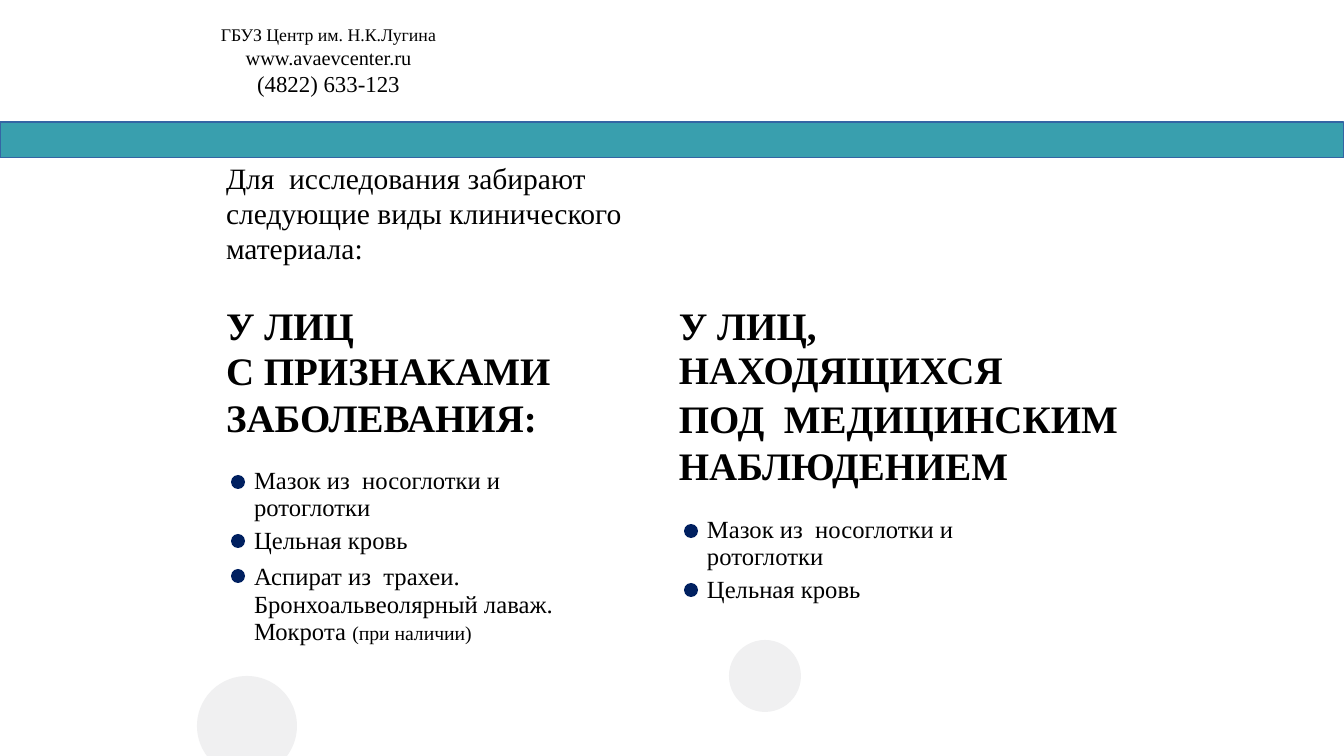
from pptx import Presentation
from pptx.dml.color import RGBColor
from pptx.enum.shapes import MSO_SHAPE as Shape
from pptx.enum.text import MSO_ANCHOR as Anchor, MSO_AUTO_SIZE as AutoSize, PP_ALIGN as Align
from pptx.util import Pt

PX = 914400 / 100.8
FONT = "Times New Roman"
BLACK, TEAL, BLUE, PALE, NAVY = "000000", "399FAE", "3465A4", "F0F0F1", "002060"

# Content: each line is (text, size, line spacing, space before)
CONTACTS = [("ГБУЗ Центр им. Н.К.Лугина", 12.7, 1.0, 0),
            ("www.avaevcenter.ru", 14.5, 1.0, 0),
            ("(4822) 633-123", 16.3, 1.0, 0)]
INTRO = [("Для  исследования забирают", 21.1, Pt(22.9), 0),
         ("следующие виды клинического материала:", 21.1, Pt(25.2), 0)]
SWAB = "Мазок из  носоглотки и\vротоглотки"
BLOOD = "Цельная кровь"
COLUMNS = [
    {"left": 226, "width": 386,
     "heading": [("У ЛИЦ", 27.8, Pt(30.5), 0),
                 ("С ПРИЗНАКАМИ", 27.8, Pt(31.9), 0.2),
                 ("ЗАБОЛЕВАНИЯ:", 27.8, Pt(31.9), 1.7)],
     "samples": [(SWAB, 17.6, Pt(19.4), 19.2),
                 (BLOOD, 17.6, 0.96, 3.4),
                 ("Аспират из  трахеи. Бронхоальвеолярный лаваж. Мокрота ",
                  17.6, Pt(19.4), 6.3)],
     "note": ("(при наличии)", 14.1),
     "dots": [475, 534, 569]},
    {"left": 679, "width": 444,
     "heading": [("У ЛИЦ,", 27.8, Pt(30.5), 0),
                 ("НАХОДЯЩИХСЯ", 27.8, 0.96, 0.2),
                 ("ПОД  МЕДИЦИНСКИМ", 27.8, Pt(31.9), 1.7),
                 ("НАБЛЮДЕНИЕМ", 27.8, Pt(31.9), 1.7)],
     "samples": [(SWAB, 17.6, Pt(19.4), 20.4),
                 (BLOOD, 17.6, 0.96, 3.4)],
     "note": None,
     "dots": [524, 583]},
]
CIRCLES = [(197, 676, 100), (729, 640, 72)]  # left, top, diameter
COLUMN_TOP, COLUMN_HEIGHT = 306, 338
DOT, DOT_OFFSET, SAMPLE_INDENT = 14, 5, 28


def px(length):
    return round(length * PX)


def color(code):
    return RGBColor.from_string(code)


def add_figure(kind, left, top, width, height, fill, line=None):
    figure = slide.shapes.add_shape(kind, px(left), px(top), px(width), px(height))
    figure.shadow.inherit = False
    figure.fill.solid()
    figure.fill.fore_color.rgb = color(fill)
    if line:
        figure.line.color.rgb = color(line)
        figure.line.width = Pt(0.75)
    else:
        figure.line.fill.background()


def format_run(run, size, bold):
    run.font.name = FONT
    run.font.size = Pt(size)
    run.font.bold = bold
    run.font.color.rgb = color(BLACK)


def prepare_frame(frame):
    frame.word_wrap = True
    frame.auto_size = AutoSize.NONE
    frame.vertical_anchor = Anchor.TOP
    frame.margin_left = frame.margin_top = frame.margin_right = frame.margin_bottom = 0


def write_lines(frame, lines, align=Align.LEFT, bold_count=0):
    prepare_frame(frame)
    for index, (text, size, spacing, before) in enumerate(lines):
        paragraph = frame.paragraphs[0] if index == 0 else frame.add_paragraph()
        paragraph.text = text
        paragraph.alignment = align
        paragraph.line_spacing = spacing
        paragraph.space_before = Pt(before)
        for run in paragraph.runs:
            format_run(run, size, index < bold_count)


def add_text(left, top, width, height):
    return slide.shapes.add_textbox(px(left), px(top), px(width), px(height)).text_frame


deck = Presentation()
deck.slide_width, deck.slide_height = px(1344), px(756)
slide = deck.slides.add_slide(deck.slide_layouts[5])

# Header: contacts and band
add_figure(Shape.RECTANGLE, 0, 122, 1344, 36, TEAL, BLUE)
write_lines(add_text(174, 24, 309, 76), CONTACTS, Align.CENTER)

# Pale decorative circles
for left, top, diameter in CIRCLES:
    add_figure(Shape.OVAL, left, top, diameter, diameter, PALE)

# Title
title = slide.shapes.title
title.left, title.top, title.width, title.height = px(226), px(163), px(485), px(101)
write_lines(title.text_frame, INTRO)

# Columns: heading, samples and their dots
for column in COLUMNS:
    heading, samples = column["heading"], column["samples"]
    frame = add_text(column["left"], COLUMN_TOP, column["width"], COLUMN_HEIGHT)
    write_lines(frame, heading + samples, bold_count=len(heading))
    for paragraph in frame.paragraphs[len(heading):]:
        properties = paragraph._p.get_or_add_pPr()
        properties.set("marL", str(px(SAMPLE_INDENT)))
        properties.set("indent", "0")
    if column["note"]:
        text, size = column["note"]
        note = frame.paragraphs[-1].add_run()
        note.text = text
        format_run(note, size, False)
    for top in column["dots"]:
        add_figure(Shape.OVAL, column["left"] + DOT_OFFSET, top, DOT, DOT, NAVY)

deck.save("out.pptx")
